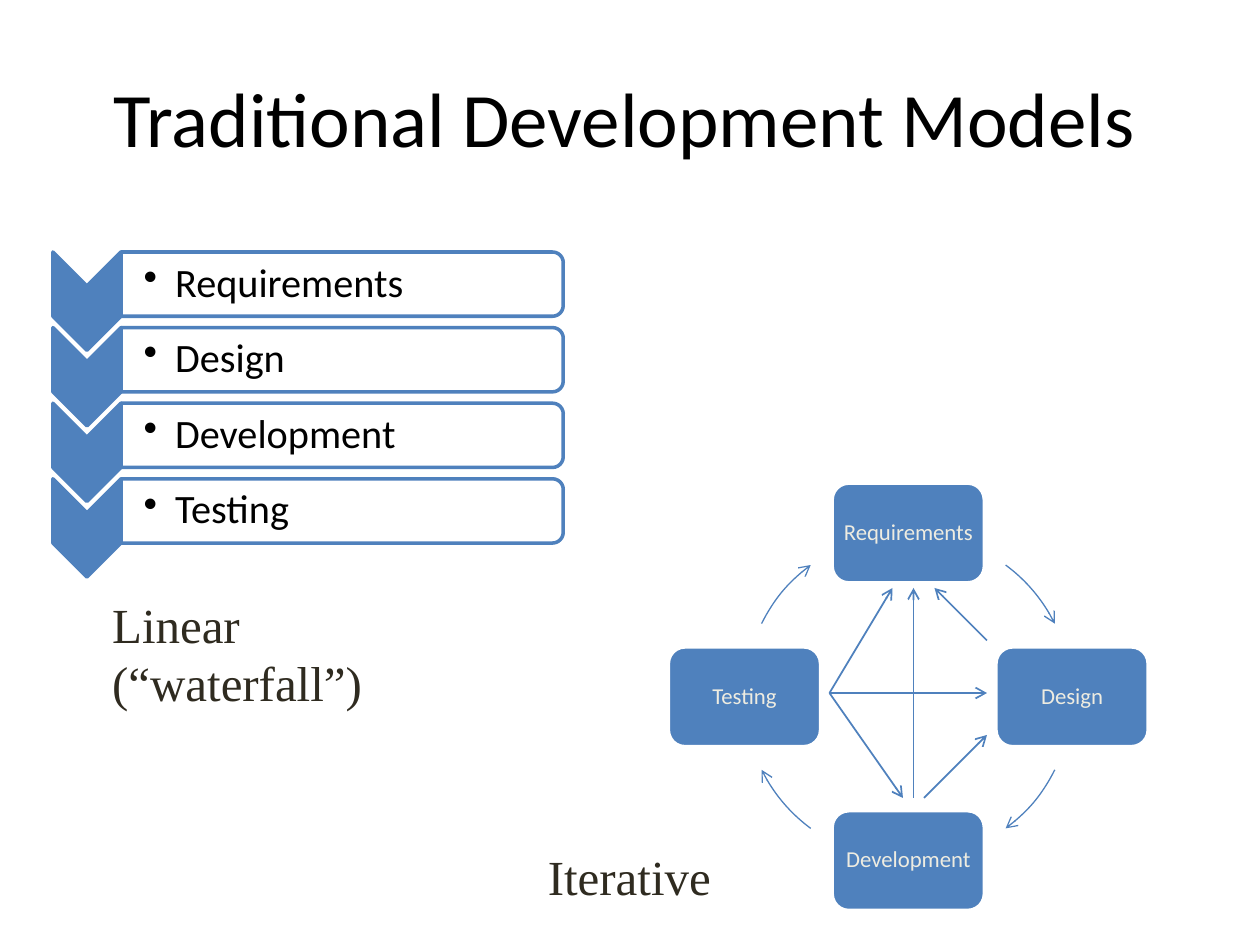
from lxml.etree import SubElement
from pptx import Presentation
from pptx.dml.color import RGBColor
from pptx.enum.shapes import MSO_CONNECTOR, MSO_SHAPE
from pptx.enum.text import MSO_ANCHOR, PP_ALIGN
from pptx.oxml.ns import qn
from pptx.util import Inches, Pt

prs = Presentation()
prs.slide_width, prs.slide_height = Inches(10), Inches(7.5)
U = prs.slide_width / 120  # grid of 120 columns by 90 rows
BLUE, WHITE = "4F81BD", "FFFFFF"
rgb = RGBColor.from_string


def grid(*cells):
    return [round(n * U) for n in cells]


def write(sp, text, size, color, font="Calibri", align=PP_ALIGN.LEFT,
          anchor=MSO_ANCHOR.MIDDLE, inset=None, bullet=False, spacing=None, wrap=True):
    tf = sp.text_frame
    tf.text, tf.word_wrap, tf.vertical_anchor = text, wrap, anchor
    if inset:
        tf.margin_left, tf.margin_top, tf.margin_right, tf.margin_bottom = grid(*inset)
    for p in tf.paragraphs:
        p.alignment, p.line_spacing = align, spacing
        if bullet:
            pPr = p._p.get_or_add_pPr()
            pPr.set("marL", str(Inches(0.25)))
            pPr.set("indent", str(-Inches(0.25)))
            SubElement(pPr, qn("a:buChar")).set("char", "•")
        for r in p.runs:
            r.font.size, r.font.name = Pt(size), font
            r.font.color.rgb = rgb(color)


s = prs.slides.add_slide(prs.slide_layouts[5])
shapes = s.shapes

# Title
title = shapes.title
title.left, title.top, title.width, title.height = grid(6, 3.6, 107, 15)
write(title, "Traditional Development Models", 44, "000000", align=PP_ALIGN.CENTER)

# Waterfall: a chevron and a labelled bar per phase, both turned to the right
phases = ["Requirements", "Design", "Development", "Testing"]
for i, phase in enumerate(phases):
    y = 27.06 + 7.2 * i
    for kind, cx, cy, w, h, fill in [
            (MSO_SHAPE.CHEVRON, 8.28, y + 1.62, 9.36, 6.48, BLUE),
            (MSO_SHAPE.ROUND_2_SAME_RECTANGLE, 32.58, y, 6.12, 42.12, WHITE)]:
        sp = shapes.add_shape(kind, *grid(cx - w / 2, cy - h / 2, w, h))
        sp.rotation = 90
        sp.shadow.inherit = False
        sp.fill.solid()
        sp.fill.fore_color.rgb = rgb(fill)
        sp.line.color.rgb, sp.line.width = rgb(BLUE), Pt(2)
    label = shapes.add_textbox(*grid(11.52, y - 2.76, 41.9, 5.52))
    write(label, phase, 23, "000000", inset=(2.16, 0.2, 0.2, 0.2), bullet=True, spacing=0.9)

# Cycle: four phases clockwise around a ring, with an arc after each
CX, CY, RADIUS = 86.5, 66.36, 15.6
steps = [(0, -1), (1, 0), (0, 1), (-1, 0)]
arcs = [(306.5, 333.5), (26.5, 53.5), (126.5, 153.5), (206.5, 233.5)]
arrows = []
for phase, (dx, dy), arc in zip(phases, steps, arcs):
    x, y = CX + RADIUS * dx, CY + RADIUS * dy
    sp = shapes.add_shape(MSO_SHAPE.ROUNDED_RECTANGLE, *grid(x - 7.25, y - 4.75, 14.5, 9.5))
    sp.shadow.inherit = False
    sp.fill.solid()
    sp.fill.fore_color.rgb = rgb(BLUE)
    sp.line.color.rgb, sp.line.width = rgb(WHITE), Pt(2)
    write(sp, phase, 13, "EEECE1", align=PP_ALIGN.CENTER, inset=(0.6,) * 4,
          spacing=0.9, wrap=False)
    sp = shapes.add_shape(MSO_SHAPE.ARC, *grid(CX - RADIUS, CY - RADIUS, 2 * RADIUS, 2 * RADIUS))
    sp.shadow.inherit = False
    sp.fill.background()
    for k, angle in enumerate(arc):
        sp.adjustments[k] = angle * 0.6  # 60000ths of a degree over 100000
    sp.line.width = Pt(0.75)
    arrows.append(sp)

# Straight arrows inside the ring
for ends in [(94, 61, 89, 56), (87, 76, 87, 56), (88, 76, 94, 70),
             (79, 66, 86, 76), (79, 66, 94, 66), (79, 66, 85, 56)]:
    sp = shapes.add_connector(MSO_CONNECTOR.STRAIGHT, *grid(*ends))
    sp.line.width = Pt(1)
    arrows.append(sp)

# Shared arrow format
for sp in arrows:
    sp.line.color.rgb = rgb(BLUE)
    SubElement(sp.line._get_or_add_ln(), qn("a:tailEnd")).set("type", "arrow")
    spPr = sp._element.spPr
    if spPr.find(qn("a:effectLst")) is None:
        SubElement(spPr, qn("a:effectLst"))

# Captions
for text, box in [("Linear\n(“waterfall”)", (9.5, 56, 26.5, 12.5)),
                  ("Iterative", (51, 80, 18.1, 6.8))]:
    write(shapes.add_textbox(*grid(*box)), text, 28, "2F2B20", font="Times New Roman",
          anchor=MSO_ANCHOR.TOP, wrap=False)

prs.save("out.pptx")
